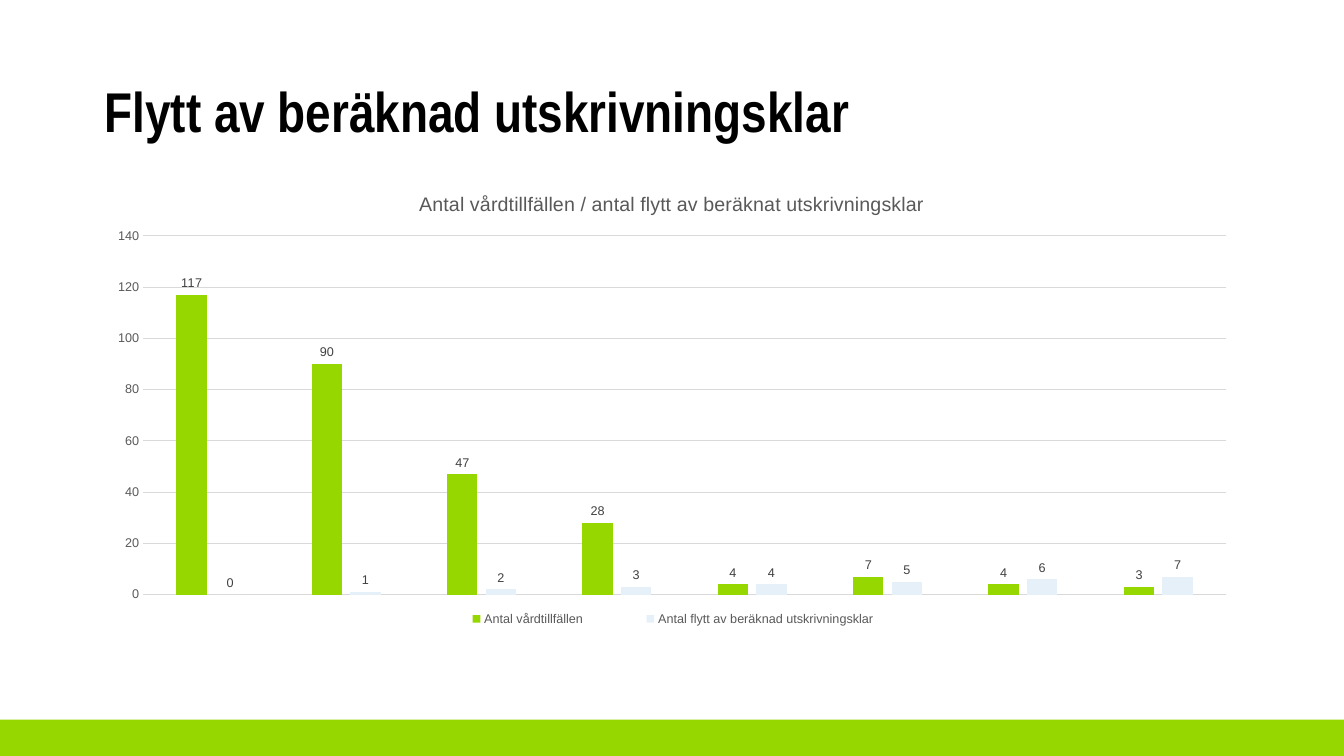
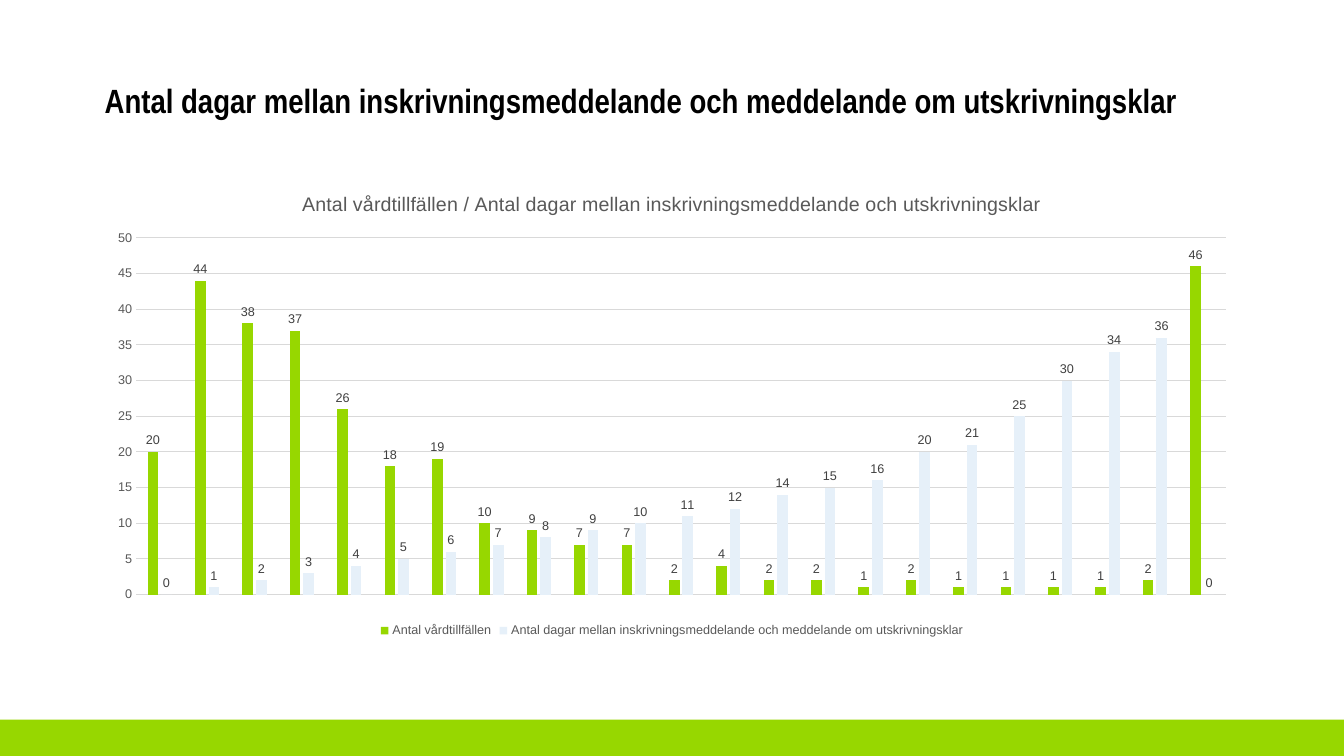
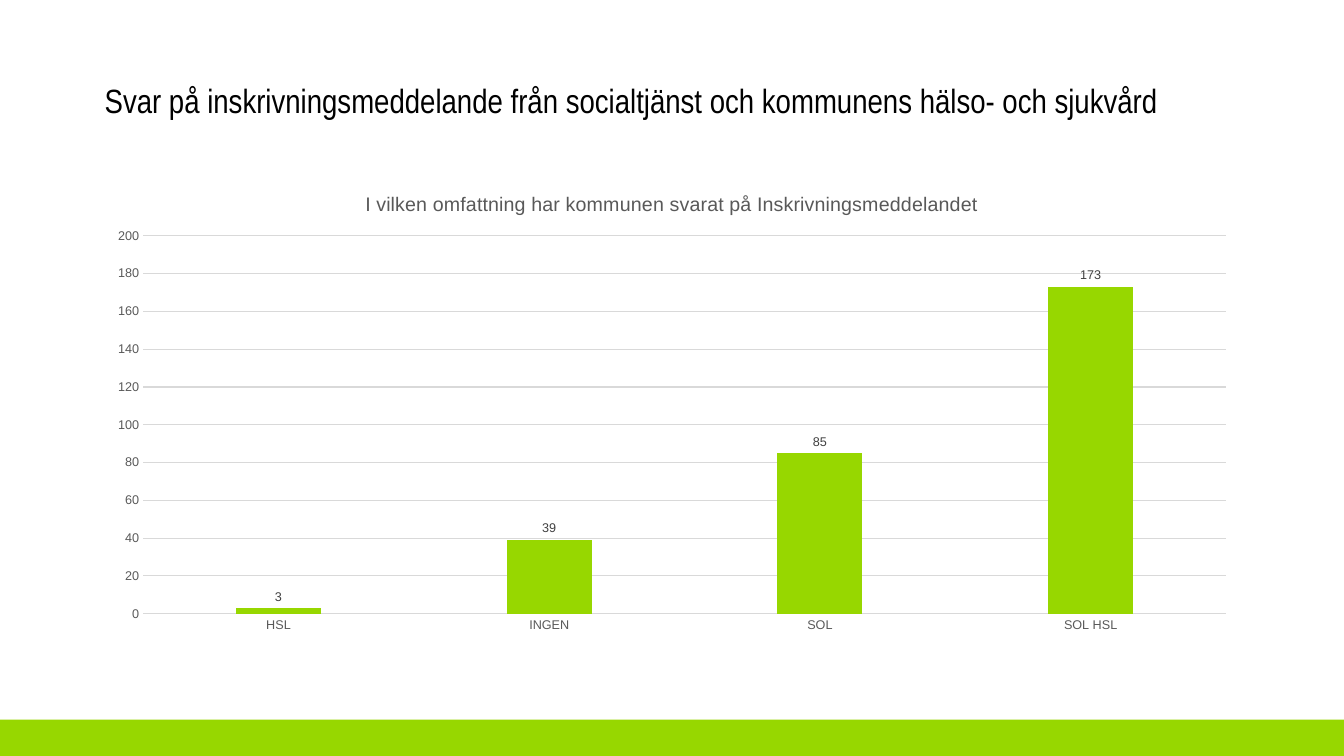
from dataclasses import dataclass

from lxml import etree
from pptx import Presentation
from pptx.chart.data import CategoryChartData
from pptx.dml.color import RGBColor
from pptx.enum.chart import XL_CHART_TYPE, XL_LABEL_POSITION, XL_LEGEND_POSITION, XL_TICK_MARK
from pptx.enum.shapes import MSO_SHAPE
from pptx.enum.text import MSO_ANCHOR
from pptx.oxml.ns import qn
from pptx.util import Inches, Pt

COLUMNS = XL_CHART_TYPE.COLUMN_CLUSTERED
LABEL_ABOVE = XL_LABEL_POSITION.OUTSIDE_END
LEGEND_BELOW = XL_LEGEND_POSITION.BOTTOM
NO_TICK = XL_TICK_MARK.NONE
RECTANGLE = MSO_SHAPE.RECTANGLE
TOP = MSO_ANCHOR.TOP


@dataclass(frozen=True)
class Theme:
    green: RGBColor = RGBColor.from_string("97D700")
    pale_blue: RGBColor = RGBColor.from_string("E6F0F9")
    black: RGBColor = RGBColor.from_string("000000")
    axis_text: RGBColor = RGBColor.from_string("595959")
    label_text: RGBColor = RGBColor.from_string("404040")
    grid: RGBColor = RGBColor.from_string("D9D9D9")
    heading_font: str = "Arial Narrow"
    body_font: str = "Arial"
    large_heading: int = 40
    small_heading: int = 24
    chart_title: int = 14
    chart_text: int = 10
    small_text: int = 9


THEME = Theme()
SLIDE_SIZE = (13.33, 7.5)
BAND_TOP = 7.14
HEADING_FRAME = (0.94, 0.79, 11.44, 0.71)
CHART_FRAME = (0.94, 1.72, 11.45, 4.65)

PAGES = [
    {
        "heading": "Flytt av beräknad utskrivningsklar",
        "size": THEME.large_heading,
        "bold": True,
        "title": "Antal vårdtillfällen / antal flytt av beräknat utskrivningsklar",
        "categories": range(1, 9),
        "series": {
            "Antal vårdtillfällen": [117, 90, 47, 28, 4, 7, 4, 3],
            "Antal flytt av beräknad utskrivningsklar": range(8),
        },
        "scale": (140, 20),
        "plot_edges": (1.42, 2.34, 12.16, 5.9),
        "legend_edges": (4.1, 6.0, 9.25, 6.28),
    },
    {
        "heading": "Antal dagar mellan inskrivningsmeddelande och meddelande om utskrivningsklar",
        "size": THEME.small_heading,
        "bold": True,
        "title": "Antal vårdtillfällen / Antal dagar mellan inskrivningsmeddelande och utskrivningsklar",
        "categories": range(1, 24),
        "series": {
            "Antal vårdtillfällen": [
                20, 44, 38, 37, 26, 18, 19, 10, 9, 7, 7, 2, 4, 2, 2, 1, 2, 1, 1, 1, 1, 2, 46,
            ],
            "Antal dagar mellan inskrivningsmeddelande och meddelande om utskrivningsklar": [
                *range(13), 14, 15, 16, 20, 21, 25, 30, 34, 36, 0,
            ],
        },
        "scale": (50, 5),
        "plot_edges": (1.35, 2.36, 12.16, 5.9),
    },
    {
        "heading": "Svar på inskrivningsmeddelande från socialtjänst och kommunens hälso- och sjukvård",
        "size": THEME.small_heading,
        "bold": False,
        "title": "I vilken omfattning har kommunen svarat på Inskrivningsmeddelandet",
        "categories": ["HSL", "INGEN", "SOL", "SOL HSL"],
        "series": {"Series 1": [3, 39, 85, 173]},
        "scale": (200, 20),
        "plot_edges": (1.42, 2.34, 12.16, 6.09),
        "show_categories": True,
    },
]


def inches(values):
    return [Inches(value) for value in values]


def style_font(font, size, color, name=THEME.body_font, bold=False):
    font.size = Pt(size)
    font.color.rgb = color
    font.name = name
    font.bold = bold


def add_band(page):
    width, height = SLIDE_SIZE
    frame = inches((0, BAND_TOP, width, height - BAND_TOP))
    band = page.shapes.add_shape(RECTANGLE, *frame)
    band.shadow.inherit = False
    band.fill.solid()
    band.fill.fore_color.rgb = THEME.green
    band.line.fill.background()


def add_heading(page, content):
    box = page.shapes.add_textbox(*inches(HEADING_FRAME))
    box.text_frame.word_wrap = True
    box.text_frame.vertical_anchor = TOP
    para = box.text_frame.paragraphs[0]
    para.line_spacing = 0.9
    span = para.add_run()
    span.text = content["heading"]
    style_font(span.font, content["size"], THEME.black, THEME.heading_font, content["bold"])


def place_part(part, edges, index, target=None):
    for old in part.findall(qn("c:layout")):
        part.remove(old)
    layout = etree.Element(qn("c:layout"))
    manual = etree.SubElement(layout, qn("c:manualLayout"))
    left, top, width, height = CHART_FRAME
    settings = {"layoutTarget": target} if target else {}
    settings |= {
        "xMode": "edge",
        "yMode": "edge",
        "x": (edges[0] - left) / width,
        "y": (edges[1] - top) / height,
        "w": (edges[2] - edges[0]) / width,
        "h": (edges[3] - edges[1]) / height,
    }
    for name, value in settings.items():
        etree.SubElement(manual, qn(f"c:{name}"), val=str(value))
    part.insert(index, layout)


def style_axes(chart, content):
    values = chart.value_axis
    values.minimum_scale = 0
    values.maximum_scale, values.major_unit = content["scale"]
    values.format.line.fill.background()
    values.has_major_gridlines = True
    categories = chart.category_axis
    categories.visible = content.get("show_categories", False)
    for axis in (values, categories):
        axis.major_tick_mark = axis.minor_tick_mark = NO_TICK
        style_font(axis.tick_labels.font, THEME.small_text, THEME.axis_text)
    for line in (values.major_gridlines.format.line, categories.format.line):
        line.color.rgb = THEME.grid
        line.width = Pt(0.75)


def style_columns(plot):
    plot.gap_width = 219
    plot.overlap = -27
    plot.vary_by_categories = False
    for series, color in zip(plot.series, (THEME.green, THEME.pale_blue)):
        series.format.fill.solid()
        series.format.fill.fore_color.rgb = color
        labels = series.data_labels
        labels.show_value = True
        labels.position = LABEL_ABOVE
        style_font(labels.font, THEME.small_text, THEME.label_text)


def add_legend(chart, edges):
    chart.has_legend = True
    legend = chart.legend
    legend.position = LEGEND_BELOW
    legend.include_in_layout = False
    style_font(legend.font, THEME.small_text, THEME.axis_text)
    if edges:
        place_part(chart.element.find(".//" + qn("c:legend")), edges, 1)


def add_column_chart(page, content):
    data = CategoryChartData()
    data.categories = [str(category) for category in content["categories"]]
    for name, values in content["series"].items():
        data.add_series(name, values)
    chart = page.shapes.add_chart(COLUMNS, *inches(CHART_FRAME), data).chart
    style_font(chart.font, THEME.chart_text, THEME.black)
    chart.has_title = True
    span = chart.chart_title.text_frame.paragraphs[0].add_run()
    span.text = content["title"]
    style_font(span.font, THEME.chart_title, THEME.axis_text)
    chart.chart_title.include_in_layout = False
    style_axes(chart, content)
    style_columns(chart.plots[0])
    place_part(chart.element.find(".//" + qn("c:plotArea")), content["plot_edges"], 0, "inner")
    if len(content["series"]) > 1:
        add_legend(chart, content.get("legend_edges"))
    else:
        chart.has_legend = False


def main():
    deck = Presentation()
    deck.slide_width, deck.slide_height = inches(SLIDE_SIZE)
    for content in PAGES:
        page = deck.slides.add_slide(deck.slide_layouts[6])
        add_band(page)
        add_heading(page, content)
        add_column_chart(page, content)
    deck.save("out.pptx")


if __name__ == "__main__":
    main()
